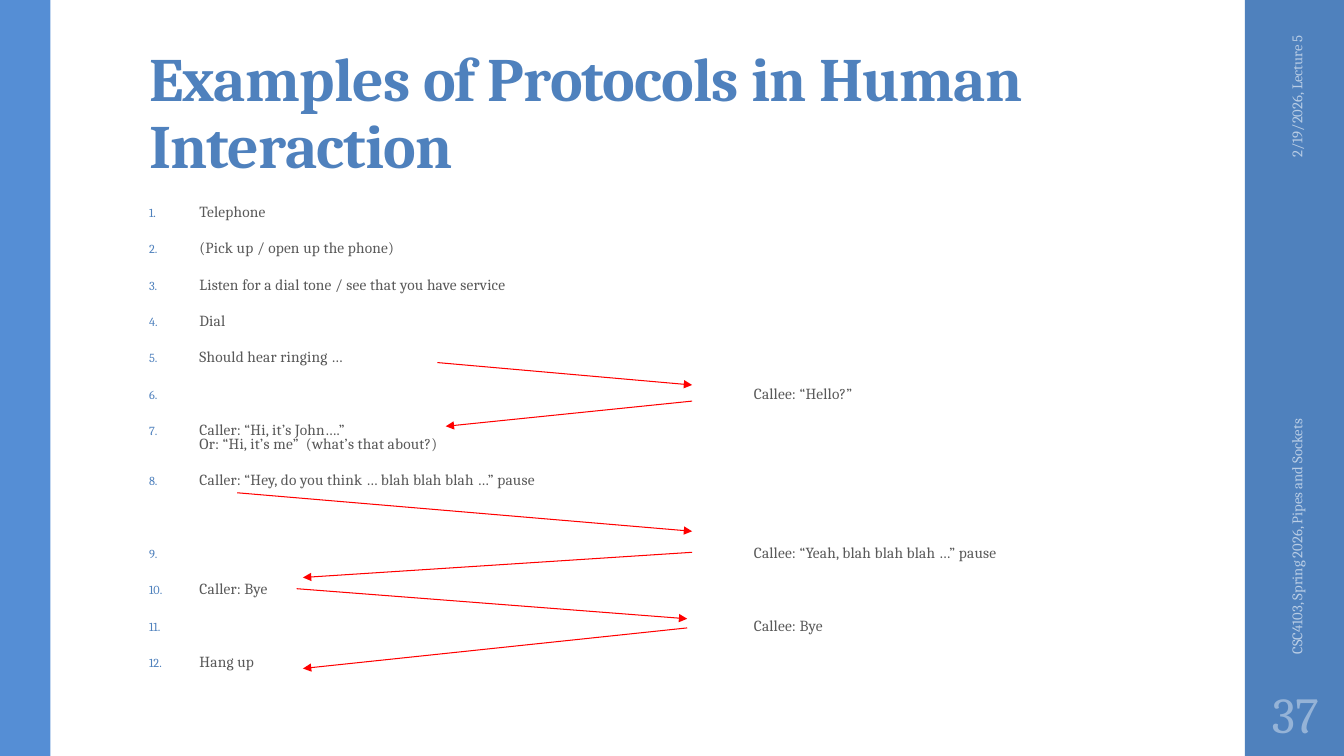
from dataclasses import dataclass

from pptx import Presentation
from pptx import util as u
from pptx.dml import color
from pptx.enum import shapes, text
from pptx.oxml import xmlchemy as xc


@dataclass(frozen=True)
class Theme:
    font: str = "Cambria"
    accent: str = "4F81BD"
    stripe: str = "558ED5"
    body: str = "595959"
    footer: str = "B9CDE5"
    number: str = "95B3D7"
    arrow: str = "FF0000"
    title_size: float = 44
    body_size: float = 11
    footer_size: float = 10.5
    number_size: float = 36


THEME = Theme()
CALLER, CALLEE = 36, 432
PAUSE = 40
STEPS = [
    (CALLER, "Telephone"),
    (CALLER, "(Pick up / open up the phone)"),
    (CALLER, "Listen for a dial tone / see that you have service"),
    (CALLER, "Dial"),
    (CALLER, "Should hear ringing …"),
    (CALLEE, "Callee: “Hello?”"),
    (CALLER, "Caller: “Hi, it’s John….”\vOr: “Hi, it’s me”  (what’s that about?)"),
    (CALLER, "Caller: “Hey, do you think … blah blah blah …” pause"),
    (CALLEE, "Callee: “Yeah, blah blah blah …” pause"),
    (CALLER, "Caller: Bye"),
    (CALLEE, "Callee: Bye"),
    (CALLER, "Hang up"),
]
SPACE_BEFORE = {0: 0, 8: PAUSE}
EXCHANGES = [
    (213, 115, 395, 131),
    (395, 142.5, 219, 160.5),
    (70, 208, 395, 235.5),
    (395, 250.5, 117, 268.5),
    (112.5, 276.5, 391.5, 298),
    (391.5, 304.5, 117, 333.5),
]


def rgb(value):
    return color.RGBColor.from_string(value)


def add_xml(parent, tag, **attributes):
    element = xc.OxmlElement(tag)
    for key, value in attributes.items():
        element.set(key, value)
    parent.append(element)
    return element


def apply(target, values):
    for key, value in values.items():
        setattr(target, key, value)


def style_text(paragraph, size, ink, bold=False, spacing=0):
    for run in paragraph.runs:
        apply(run.font, {"name": THEME.font, "size": u.Pt(size), "bold": bold})
        run.font.color.rgb = rgb(ink)
        if spacing:
            run.font._element.set("spc", str(spacing))


def add_frame(slide, box, **values):
    holder = slide.shapes.add_textbox(*map(u.Pt, box))
    apply(holder.text_frame, {"word_wrap": True, **values})
    return holder


def add_band(slide, box, fill):
    band = slide.shapes.add_shape(shapes.MSO_SHAPE.RECTANGLE, *map(u.Pt, box))
    band.shadow.inherit = False
    band.fill.solid()
    band.fill.fore_color.rgb = rgb(fill)
    band.line.fill.background()


def add_title(slide, box):
    title = add_frame(slide, box, vertical_anchor=text.MSO_ANCHOR.BOTTOM,
                      margin_top=u.Pt(2), margin_bottom=u.Pt(3.6))
    heading = title.text_frame.paragraphs[0]
    heading.text = "Examples of Protocols in Human Interaction"
    heading.line_spacing = 0.9
    style_text(heading, THEME.title_size, THEME.accent, True, -50)


def add_steps(slide, box):
    frame = add_frame(slide, box).text_frame
    for index, (indent, wording) in enumerate(STEPS):
        step = frame.add_paragraph() if index else frame.paragraphs[0]
        step.text = wording
        apply(step, {"line_spacing": 0.75, "space_after": u.Pt(2),
                     "space_before": u.Pt(SPACE_BEFORE.get(index, 14))})
        properties = step._p.get_or_add_pPr()
        properties.set("marL", str(u.Pt(indent)))
        properties.set("indent", str(-u.Pt(indent)))
        add_xml(add_xml(properties, "a:buClr"), "a:srgbClr", val=THEME.accent)
        add_xml(properties, "a:buSzPct", val="80000")
        add_xml(properties, "a:buFont", typeface="+mj-lt")
        add_xml(properties, "a:buAutoNum", type="arabicPeriod")
        style_text(step, THEME.body_size, THEME.body, spacing=10)


def add_exchanges(slide, box):
    left, top = box[:2]
    for x1, y1, x2, y2 in EXCHANGES:
        ends = (left + x1, top + y1, left + x2, top + y2)
        arrow = slide.shapes.add_connector(
            shapes.MSO_CONNECTOR.STRAIGHT, *map(u.Pt, ends))
        arrow.line.color.rgb = rgb(THEME.arrow)
        arrow.line.width = u.Pt(0.75)
        add_xml(arrow.line._get_or_add_ln(), "a:tailEnd", type="triangle")
        add_xml(arrow._element.spPr, "a:effectLst")


def add_sidebar(slide, box):
    left, top, width, height = box
    add_band(slide, box, THEME.accent)
    thickness = 28.8
    center = left + width / 2 + 0.9
    labels = [
        ("2/19/2026, Lecture 5", 92.9, 149.8, text.PP_ALIGN.RIGHT),
        ("CSC4103, Spring 2026, Pipes and Sockets", 333.4, 282.2, text.PP_ALIGN.LEFT),
    ]
    for wording, middle, length, alignment in labels:
        label_box = (center - length / 2, top + middle - thickness / 2, length, thickness)
        label = add_frame(slide, label_box, vertical_anchor=text.MSO_ANCHOR.MIDDLE)
        label.rotation = 270
        line = label.text_frame.paragraphs[0]
        apply(line, {"text": wording, "alignment": alignment})
        style_text(line, THEME.footer_size, THEME.footer)
    margins = {f"margin_{side}": u.Pt(3.6) for side in ("left", "right", "top", "bottom")}
    number = add_frame(slide, (left, top + height - 54, width, 46.8),
                       vertical_anchor=text.MSO_ANCHOR.MIDDLE, **margins)
    page = number.text_frame.paragraphs[0]
    apply(page, {"text": "37", "alignment": text.PP_ALIGN.CENTER})
    style_text(page, THEME.number_size, THEME.number)


def build_dialogue_slide(deck):
    slide = deck.slides.add_slide(deck.slide_layouts[6])
    steps_box = (99.4, 144, 676.8, 342.7)
    add_sidebar(slide, (889.2, 0, 72, 540))
    add_band(slide, (0, 0, 36, 540), THEME.stripe)
    add_title(slide, (99.4, 23, 763.2, 110.2))
    add_steps(slide, steps_box)
    add_exchanges(slide, steps_box)


def main():
    deck = Presentation()
    apply(deck, {"slide_width": u.Pt(960), "slide_height": u.Pt(540)})
    build_dialogue_slide(deck)
    deck.save("out.pptx")


if __name__ == "__main__":
    main()
